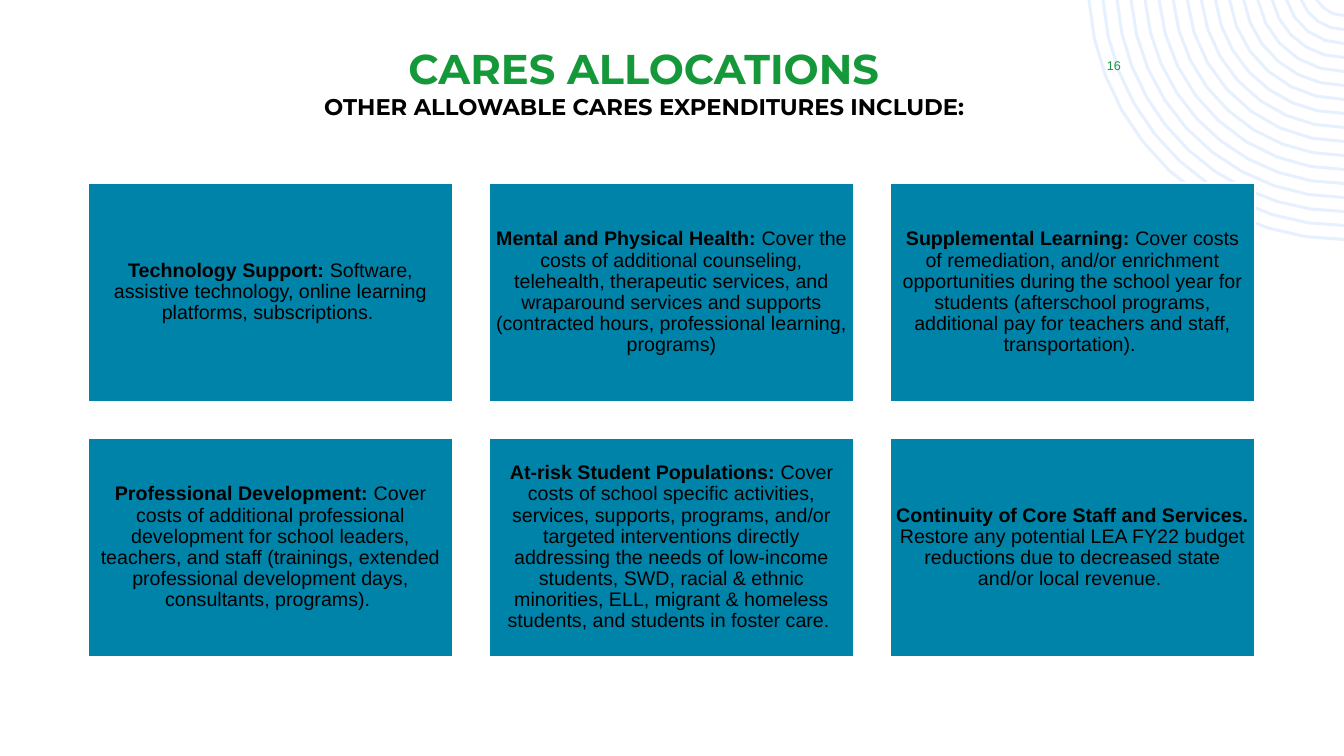
import math
from dataclasses import dataclass

import pptx
import pptx.dml.color
import pptx.enum.shapes
import pptx.enum.text
import pptx.util

SLIDE_WIDTH = 1344
SLIDE_HEIGHT = 756
EMU_PER_PX = 12192000 / SLIDE_WIDTH
GREEN, TEAL, PALE_BLUE = "159839", "0083A9", "E6F0FE"
BLACK, WHITE = "000000", "FFFFFF"

COLUMNS = 3
CARD_LEFT, CARD_TOP = 88, 183
CARD_WIDTH, CARD_HEIGHT = 365, 219
COLUMN_STEP, ROW_STEP = 401, 255
CARD_INSET = 6

RING_CENTER_Y = -16
RING_RADII = range(30, 255, 14)
RING_THICKNESS = 3


@dataclass(frozen=True)
class Expenditure:
    heading: str
    detail: str


EXPENDITURES = [
    Expenditure(
        "Technology Support:",
        " Software, assistive technology, online learning platforms, subscriptions. ",
    ),
    Expenditure(
        "Mental and Physical Health: ",
        "Cover the costs of additional counseling, telehealth, therapeutic services, "
        "and wraparound services and supports (contracted hours, professional "
        "learning, programs)",
    ),
    Expenditure(
        "Supplemental Learning: ",
        "Cover costs of remediation, and/or enrichment opportunities during the school "
        "year for students (afterschool programs, additional pay for teachers and "
        "staff, transportation). ",
    ),
    Expenditure(
        "Professional Development: ",
        "Cover costs of additional professional development for school leaders, "
        "teachers, and staff (trainings, extended professional development days, "
        "consultants, programs). ",
    ),
    Expenditure(
        "At-risk Student Populations: ",
        "Cover costs of school specific activities, services, supports, programs, "
        "and/or targeted interventions directly addressing the needs of low-income "
        "students, SWD, racial & ethnic minorities, ELL, migrant & homeless students, "
        "and students in foster care. ",
    ),
    Expenditure(
        "Continuity of Core Staff and Services. ",
        "Restore any potential LEA FY22 budget reductions due to decreased state "
        "and/or local revenue. ",
    ),
]


def px(length: float) -> pptx.util.Emu:
    return pptx.util.Emu(round(length * EMU_PER_PX))


def color(hex_code: str) -> pptx.dml.color.RGBColor:
    return pptx.dml.color.RGBColor.from_string(hex_code)


def style_font(font, name: str, size: float, hex_code: str) -> None:
    font.name = name
    font.size = pptx.util.Pt(size)
    font.color.rgb = color(hex_code)


def arc(radius: int, steps: int) -> list[tuple[int, int]]:
    start = math.asin(-RING_CENTER_Y / radius)
    angles = [start + (math.pi / 2 - start) * i / steps for i in range(steps + 1)]
    return [
        (
            px(SLIDE_WIDTH - radius * math.cos(angle)),
            px(RING_CENTER_Y + radius * math.sin(angle)),
        )
        for angle in angles
    ]


def ring_outline(radius: int) -> list[tuple[int, int]]:
    steps = 3 + radius // 32
    return arc(radius + RING_THICKNESS, steps) + arc(radius, steps)[::-1]


def draw_rings(slide) -> None:
    outlines = [ring_outline(radius) for radius in RING_RADII]
    builder = slide.shapes.build_freeform(*outlines[0][0], scale=1.0)
    for index, outline in enumerate(outlines):
        if index:
            builder.move_to(*outline[0])
        builder.add_line_segments(outline[1:], close=True)
    rings = builder.convert_to_shape()
    rings.shadow.inherit = False
    rings.fill.solid()
    rings.fill.fore_color.rgb = color(PALE_BLUE)
    rings.line.fill.background()


def write_title(slide) -> None:
    title = slide.shapes.title
    title.left, title.top, title.width, title.height = px(203), px(38), px(882), px(85)
    frame = title.text_frame
    frame.word_wrap = True
    frame.auto_size = pptx.enum.text.MSO_AUTO_SIZE.NONE
    frame.vertical_anchor = pptx.enum.text.MSO_ANCHOR.TOP
    paragraph = frame.paragraphs[0]
    paragraph.alignment = pptx.enum.text.PP_ALIGN.CENTER
    paragraph.line_spacing = 1.0
    paragraph.font.bold = True
    heading = paragraph.add_run()
    heading.text = "CARES ALLOCATIONS"
    style_font(heading.font, "Montserrat", 29.7, GREEN)
    paragraph.add_line_break()
    subheading = paragraph.add_run()
    subheading.text = "OTHER ALLOWABLE CARES EXPENDITURES INCLUDE:"
    style_font(subheading.font, "Montserrat", 16.2, BLACK)


def write_page_number(slide) -> None:
    page_number = slide.shapes.add_textbox(px(1073), px(50), px(82), px(30))
    frame = page_number.text_frame
    frame.word_wrap = True
    frame.vertical_anchor = pptx.enum.text.MSO_ANCHOR.MIDDLE
    paragraph = frame.paragraphs[0]
    paragraph.text = "16"
    paragraph.alignment = pptx.enum.text.PP_ALIGN.CENTER
    paragraph.space_after = pptx.util.Pt(6)
    style_font(paragraph.font, "Arial", 9, GREEN)


def draw_card(slide, index: int, expenditure: Expenditure) -> None:
    row, column = divmod(index, COLUMNS)
    card = slide.shapes.add_shape(
        pptx.enum.shapes.MSO_SHAPE.RECTANGLE,
        px(CARD_LEFT + column * COLUMN_STEP),
        px(CARD_TOP + row * ROW_STEP),
        px(CARD_WIDTH),
        px(CARD_HEIGHT),
    )
    card.shadow.inherit = False
    card.fill.solid()
    card.fill.fore_color.rgb = color(TEAL)
    card.line.color.rgb = color(WHITE)
    card.line.width = pptx.util.Pt(1.5)
    frame = card.text_frame
    frame.word_wrap = True
    frame.vertical_anchor = pptx.enum.text.MSO_ANCHOR.MIDDLE
    frame.margin_left = frame.margin_right = px(CARD_INSET)
    frame.margin_top = frame.margin_bottom = px(CARD_INSET)
    paragraph = frame.paragraphs[0]
    paragraph.alignment = pptx.enum.text.PP_ALIGN.CENTER
    paragraph.line_spacing = 0.9
    paragraph.space_after = pptx.util.Pt(5)
    style_font(paragraph.font, "Arial", 14, BLACK)
    heading = paragraph.add_run()
    heading.text = expenditure.heading
    heading.font.bold = True
    detail = paragraph.add_run()
    detail.text = expenditure.detail


def main() -> None:
    presentation = pptx.Presentation()
    presentation.slide_width = px(SLIDE_WIDTH)
    presentation.slide_height = px(SLIDE_HEIGHT)
    slide = presentation.slides.add_slide(presentation.slide_layouts[5])
    draw_rings(slide)
    write_title(slide)
    write_page_number(slide)
    for index, expenditure in enumerate(EXPENDITURES):
        draw_card(slide, index, expenditure)
    presentation.save("out.pptx")


if __name__ == "__main__":
    main()
